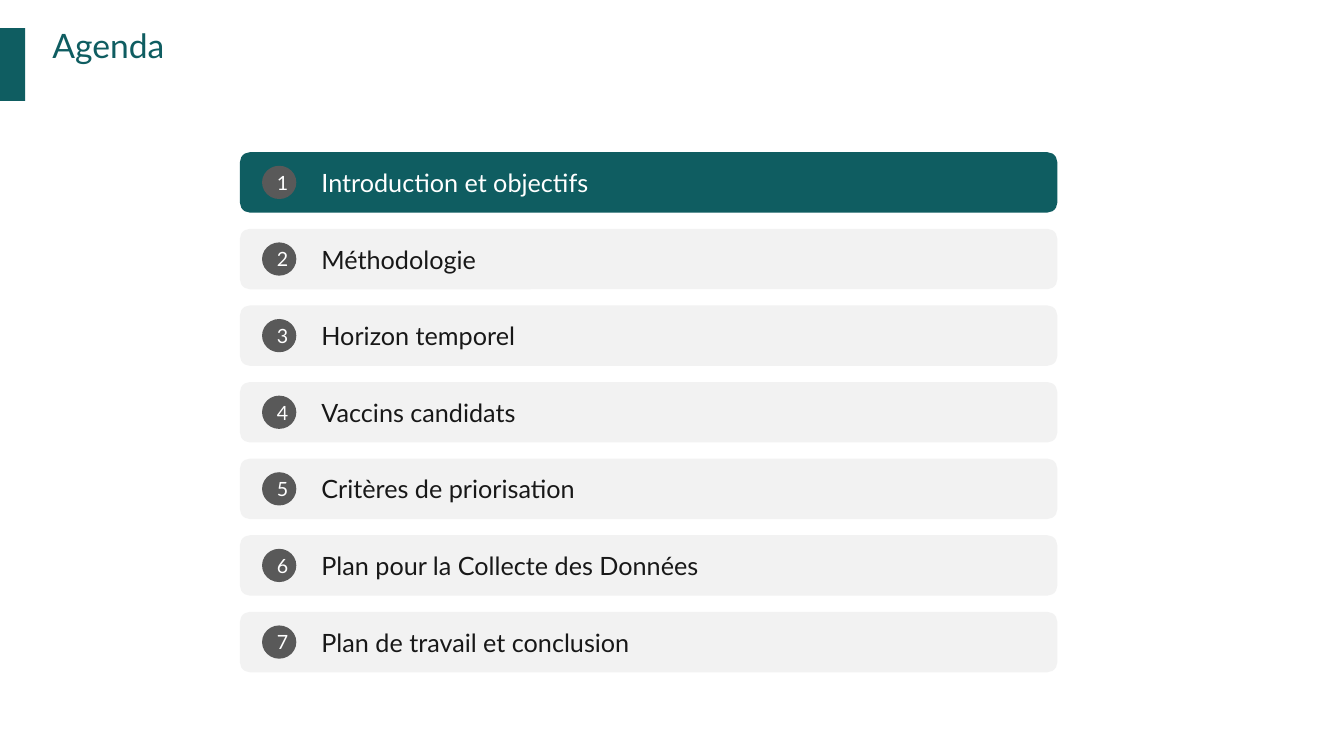
"""Build the agenda slide with its first topic highlighted."""
from pptx import Presentation
from pptx import util as u
from pptx.dml.color import RGBColor
from pptx.enum import shapes, text

TITLE = "Agenda"
TOPICS = [
    "Introduction et objectifs",
    "Méthodologie",
    "Horizon temporel",
    "Vaccins candidats",
    "Critères de priorisation",
    "Plan pour la Collecte des Données",
    "Plan de travail et conclusion",
]
CURRENT = 1

TEAL = RGBColor(0x0F, 0x5D, 0x61)
PALE = RGBColor(0xF2, 0xF2, 0xF2)
GREY = RGBColor(0x59, 0x59, 0x59)
INK = RGBColor(0x18, 0x18, 0x18)
WHITE = RGBColor(0xFF, 0xFF, 0xFF)

ACCENT_BOX = (-0.72, 20.16, 18.72, 51.84)
TITLE_BOX = (37.44, 18, 903.6, 57.6)
BAR_LEFT, BAR_TOP, BAR_WIDTH, BAR_HEIGHT = 171.36, 108.72, 583.92, 43.2
BAR_PITCH = 54.72
BADGE_LEFT, BADGE_WIDTH, BADGE_HEIGHT = 187.2, 24.48, 23.76

TITLE_FRAME = dict.fromkeys(
    ("margin_left", "margin_top", "margin_right", "margin_bottom"), u.Pt(0))
BAR_FRAME = {"vertical_anchor": text.MSO_ANCHOR.MIDDLE, "margin_left": u.Pt(56.16)}
BADGE_FRAME = {"vertical_anchor": text.MSO_ANCHOR.MIDDLE}


def points(box):
    return [u.Pt(length) for length in box]


def apply(target, values):
    for name, value in values.items():
        setattr(target, name, value)


def add_block(slide, kind, box, fill):
    shape = slide.shapes.add_shape(kind, *points(box))
    shape.shadow.inherit = False
    shape.fill.solid()
    shape.fill.fore_color.rgb = fill
    shape.line.fill.background()
    return shape


def write(shape, wording, size, color, frame, align=text.PP_ALIGN.LEFT):
    apply(shape.text_frame, {"word_wrap": True, **frame})
    paragraph = shape.text_frame.paragraphs[0]
    paragraph.alignment = align
    run = paragraph.add_run()
    run.text = wording
    apply(run.font, {"name": "Lato", "size": u.Pt(size)})
    run.font.color.rgb = color


def main():
    presentation = Presentation()
    apply(presentation, {"slide_width": u.Pt(960), "slide_height": u.Pt(540)})
    slide = presentation.slides.add_slide(presentation.slide_layouts[6])

    add_block(slide, shapes.MSO_SHAPE.RECTANGLE, ACCENT_BOX, TEAL)
    title = slide.shapes.add_textbox(*points(TITLE_BOX))
    write(title, TITLE, 24, TEAL, TITLE_FRAME)

    for number, topic in enumerate(TOPICS, start=1):
        top = BAR_TOP + (number - 1) * BAR_PITCH
        fill, color = (TEAL, WHITE) if number == CURRENT else (PALE, INK)
        bar = add_block(slide, shapes.MSO_SHAPE.ROUNDED_RECTANGLE,
                        (BAR_LEFT, top, BAR_WIDTH, BAR_HEIGHT), fill)
        write(bar, topic, 18, color, BAR_FRAME)

        badge_top = top + (BAR_HEIGHT - BADGE_HEIGHT) / 2
        badge = add_block(slide, shapes.MSO_SHAPE.OVAL,
                          (BADGE_LEFT, badge_top, BADGE_WIDTH, BADGE_HEIGHT), GREY)
        write(badge, str(number), 14, WHITE, BADGE_FRAME, text.PP_ALIGN.CENTER)

    presentation.save("out.pptx")


if __name__ == "__main__":
    main()
